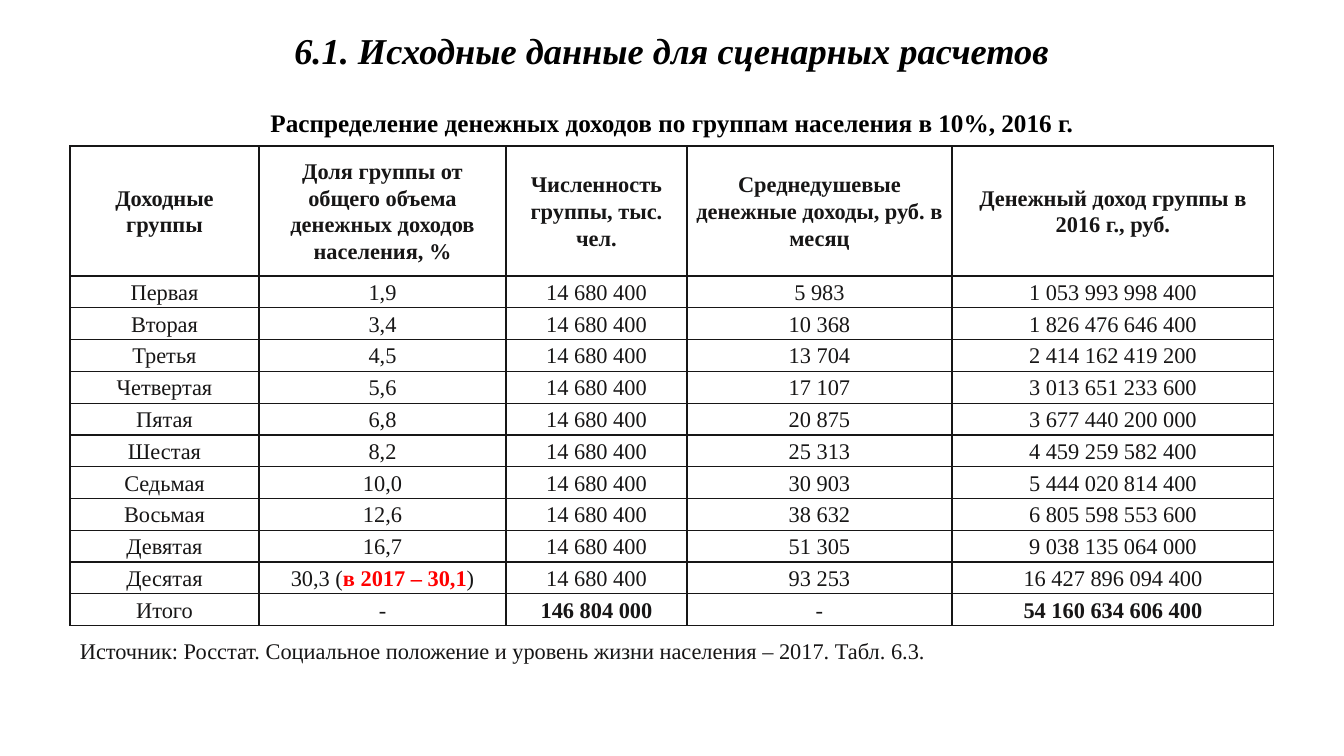
from lxml.etree import SubElement
from pptx import Presentation
from pptx.dml.color import RGBColor
from pptx.enum.text import MSO_ANCHOR, PP_ALIGN
from pptx.oxml.ns import qn
from pptx.util import Pt

PX = 914400 / 100.8
INK = "171616"


def px(length):
    return round(length * PX)


def style(paragraph, size, color, align, spacing, bold=False, italic=False):
    paragraph.alignment = align
    paragraph.line_spacing = spacing
    for run in paragraph.runs:
        run.font.name = "Times New Roman"
        run.font.size = Pt(size)
        run.font.bold = bold
        run.font.italic = italic
        run.font.color.rgb = RGBColor.from_string(color)


presentation = Presentation()
presentation.slide_width = px(1344)
presentation.slide_height = px(756)
slide = presentation.slides.add_slide(presentation.slide_layouts[6])

# Heading, table caption and source line
captions = [
    ("6.1. Исходные данные для сценарных расчетов",
     (0, 23, 1344, 54), 26, "000000", PP_ALIGN.CENTER, 1.0, True, True),
    ("Распределение денежных доходов по группам населения в 10%, 2016 г.",
     (0, 87, 1344, 50), 18, "000000", PP_ALIGN.CENTER, 1.5, True, False),
    ("Источник: Росстат. Социальное положение и уровень жизни населения – 2017. Табл. 6.3.",
     (70, 619, 1204, 46), 16, INK, PP_ALIGN.LEFT, 1.5, False, False),
]
for wording, place, *look in captions:
    caption = slide.shapes.add_textbox(*map(px, place)).text_frame
    caption.word_wrap = True
    caption.text = wording
    style(caption.paragraphs[0], *look)

# Income data: group, share, income per head, income of the group
headings = [
    "Доходные группы",
    "Доля группы от общего объема денежных доходов населения, %",
    "Численность группы, тыс. чел.",
    "Среднедушевые денежные доходы, руб. в месяц",
    "Денежный доход группы в 2016 г., руб.",
]
deciles = [
    ("Первая", "1,9", "5 983", "1 053 993 998 400"),
    ("Вторая", "3,4", "10 368", "1 826 476 646 400"),
    ("Третья", "4,5", "13 704", "2 414 162 419 200"),
    ("Четвертая", "5,6", "17 107", "3 013 651 233 600"),
    ("Пятая", "6,8", "20 875", "3 677 440 200 000"),
    ("Шестая", "8,2", "25 313", "4 459 259 582 400"),
    ("Седьмая", "10,0", "30 903", "5 444 020 814 400"),
    ("Восьмая", "12,6", "38 632", "6 805 598 553 600"),
    ("Девятая", "16,7", "51 305", "9 038 135 064 000"),
    ("Десятая", "30,3 (", "93 253", "16 427 896 094 400"),
]
total = ["Итого", "-", "146 804 000", "-", "54 160 634 606 400"]
rows = [headings]
for group, share, per_head, income in deciles:
    rows.append([group, share, "14 680 400", per_head, income])
rows.append(total)

# Table grid
column_widths = [189, 247, 181, 265, 322]
header_height, body_height = 130, 350
income_table = slide.shapes.add_table(
    len(rows), len(headings), px(70), px(146),
    px(sum(column_widths)), px(header_height + body_height)).table
income_table.first_row = False
income_table.horz_banding = False
for column, width in zip(income_table.columns, column_widths):
    column.width = px(width)
for row in income_table.rows:
    row.height = px(body_height / (len(rows) - 1))
income_table.rows[0].height = px(header_height)

# Table cells
for r, row in enumerate(rows):
    for c, wording in enumerate(row):
        cell = income_table.cell(r, c)
        cell.margin_left = cell.margin_right = px(6)
        cell.margin_top = cell.margin_bottom = 0
        cell.vertical_anchor = MSO_ANCHOR.MIDDLE
        for side in ("a:lnL", "a:lnR", "a:lnT", "a:lnB"):
            border = SubElement(cell._tc.get_or_add_tcPr(), qn(side), w=str(Pt(1)))
            SubElement(SubElement(border, qn("a:solidFill")), qn("a:srgbClr"), val=INK)
        cell.fill.background()
        cell.text = wording
        bold = row is headings or (row is total and c in (2, 4))
        style(cell.text_frame.paragraphs[0], 16, INK, PP_ALIGN.CENTER, 1.07, bold)

# Red remark on the share of the tenth group
tenth_share = income_table.cell(len(deciles), 1).text_frame.paragraphs[0]
for wording in ("в 2017 – 30,1", ")"):
    tenth_share.add_run().text = wording
style(tenth_share, 16, INK, PP_ALIGN.CENTER, 1.07)
remark = tenth_share.runs[1].font
remark.bold = True
remark.color.rgb = RGBColor.from_string("FF0000")

presentation.save("out.pptx")
